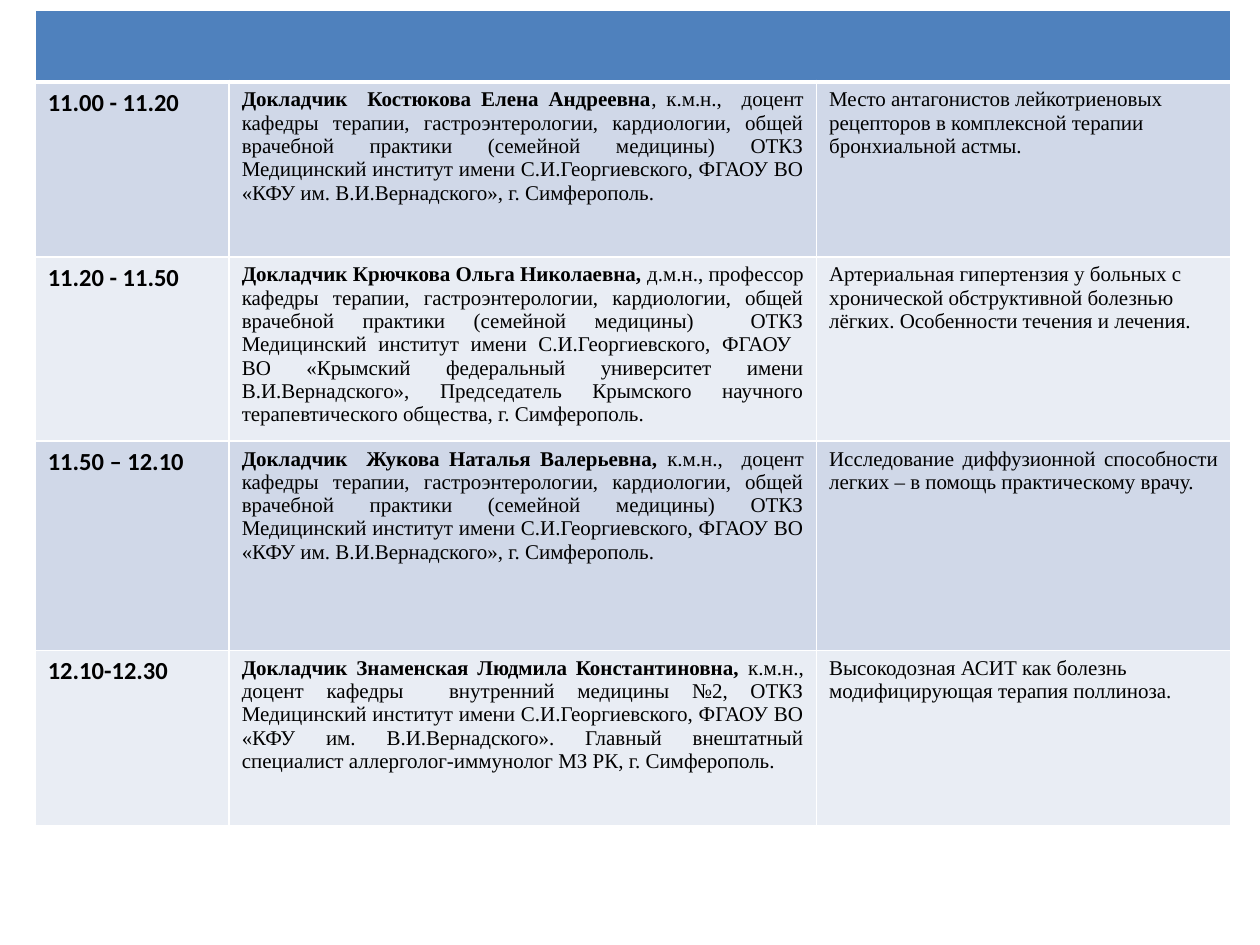
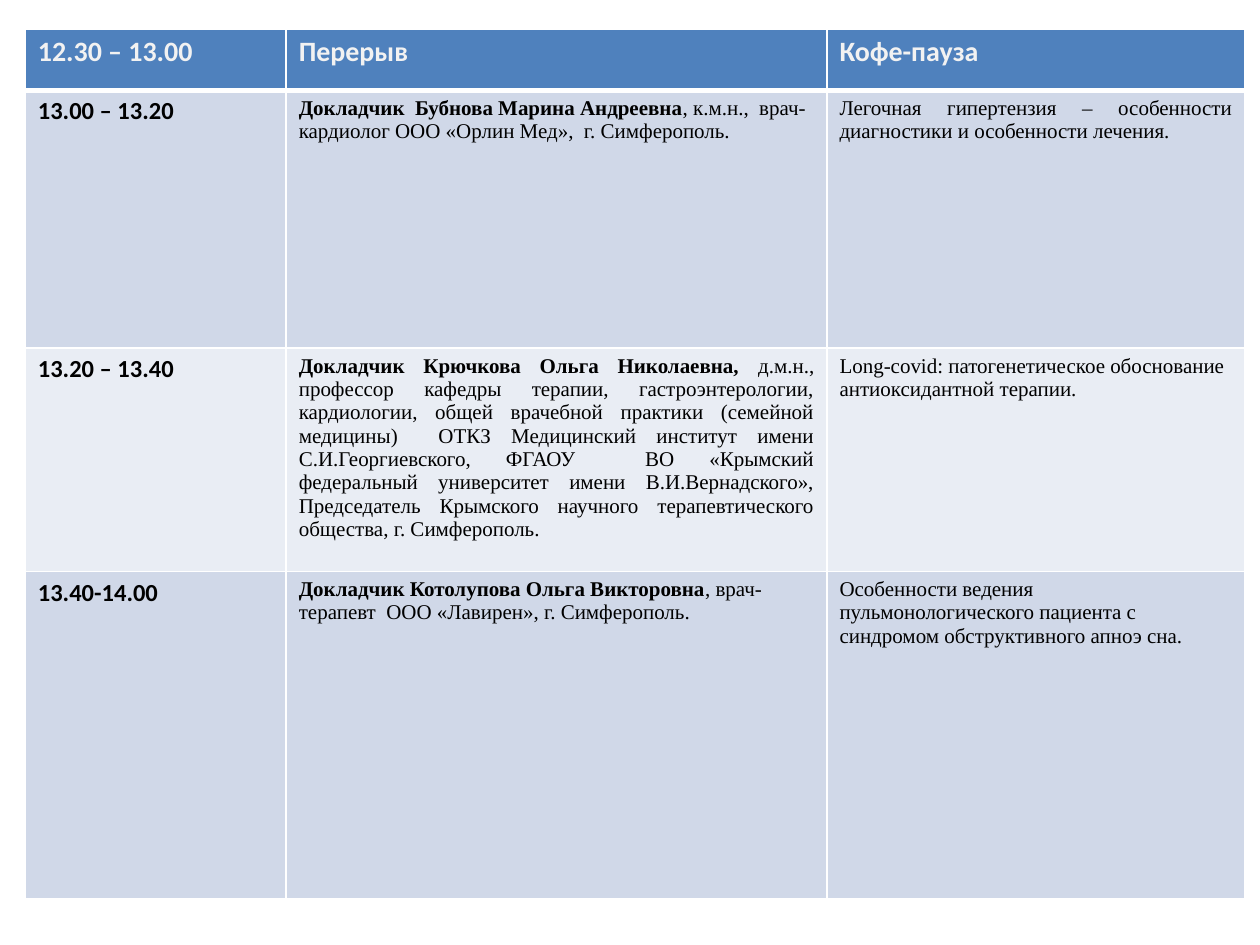
from lxml import etree
from pptx import Presentation
from pptx.dml.color import RGBColor
from pptx.enum.text import PP_ALIGN
from pptx.oxml.ns import qn
from pptx.util import Cm, Pt

LEFT, JUSTIFY = PP_ALIGN.LEFT, PP_ALIGN.JUSTIFY
BLUE = RGBColor(0x4F, 0x81, 0xBD)
BAND_DARK = RGBColor(0xD0, 0xD8, 0xE8)
BAND_LIGHT = RGBColor(0xE9, 0xED, 0xF4)
WHITE = RGBColor(0xFF, 0xFF, 0xFF)
PALE = RGBColor(0xF2, 0xF2, 0xF2)
BLACK = RGBColor(0, 0, 0)

HEADER = {"name": "Calibri", "size": Pt(16), "bold": True}
TIME = {"name": "Calibri", "size": Pt(14), "bold": True}
SPEAKER = {"name": "Times New Roman", "size": Pt(12), "bold": True}
BODY = {"name": "Times New Roman", "size": Pt(12), "bold": False}

DEPARTMENT = ("кафедры терапии, гастроэнтерологии, кардиологии, "
              "общей врачебной практики (семейной медицины)")
INSTITUTE = "ОТКЗ Медицинский институт имени С.И.Георгиевского,"
UNIVERSITY = "ФГАОУ ВО «КФУ им. В.И.Вернадского»"
DOCENT = f"к.м.н.,  доцент {DEPARTMENT} {INSTITUTE} {UNIVERSITY}, г. Симферополь."
PROFESSOR = ("Крючкова Ольга Николаевна, ",
             f"д.м.н., профессор {DEPARTMENT}  {INSTITUTE} ФГАОУ  ВО "
             "«Крымский федеральный университет имени В.И.Вернадского», "
             "Председатель Крымского научного терапевтического общества, "
             "г. Симферополь.", JUSTIFY)

MORNING = [
    ("11.00 - 11.20", (" Костюкова Елена Андреевна", f", {DOCENT}", JUSTIFY),
     ("Место антагонистов лейкотриеновых  рецепторов в комплексной терапии "
      "бронхиальной астмы.", LEFT)),
    ("11.20 - 11.50", PROFESSOR,
     ("Артериальная гипертензия у больных с хронической обструктивной болезнью "
      "лёгких. Особенности течения и лечения.", LEFT)),
    ("11.50 – 12.10", (" Жукова Наталья Валерьевна, ", DOCENT, JUSTIFY),
     ("Исследование диффузионной способности легких – в помощь практическому врачу.",
      JUSTIFY)),
    ("12.10-12.30",
     ("Знаменская Людмила Константиновна,",
      f" к.м.н., доцент кафедры  внутренний медицины №2, {INSTITUTE} {UNIVERSITY}. "
      "Главный внештатный специалист аллерголог-иммунолог МЗ РК, г. Симферополь.",
      JUSTIFY),
     ("Высокодозная АСИТ как болезнь модифицирующая терапия поллиноза.", LEFT)),
]
AFTERNOON = [
    ("13.00 – 13.20",
     (" Бубнова Марина Андреевна",
      ", к.м.н.,  врач-кардиолог ООО «Орлин Мед»,  г. Симферополь.", LEFT),
     ("Легочная гипертензия – особенности диагностики и особенности лечения.", JUSTIFY)),
    ("13.20 – 13.40", PROFESSOR,
     ("Long-covid: патогенетическое обоснование антиоксидантной терапии.", LEFT)),
    ("13.40-14.00",
     ("Котолупова Ольга Викторовна",
      ", врач-терапевт  ООО «Лавирен», г. Симферополь.", LEFT),
     ("Особенности ведения пульмонологического пациента с синдромом "
      "обструктивного апноэ сна.", LEFT)),
]


class ProgrammeDeck:
    """Holds the presentation, its current slide and the programme table style."""

    def __init__(self):
        self.presentation = Presentation()
        self.presentation.slide_width = Cm(25.4)
        self.presentation.slide_height = Cm(19.05)
        self.slide = None

    def add_slide(self):
        layout = self.presentation.slide_layouts[6]
        self.slide = self.presentation.slides.add_slide(layout)

    def add_text(self, cell, runs, color=BLACK, alignment=LEFT):
        paragraph = cell.text_frame.paragraphs[0]
        paragraph.alignment = alignment
        for text, style in runs:
            run = paragraph.add_run()
            run.text = text
            for attribute, value in style.items():
                setattr(run.font, attribute, value)
            run.font.color.rgb = color

    def add_borders(self, cell, row):
        widths = {"a:lnL": 1, "a:lnR": 1, "a:lnT": 3 if row == 1 else 1,
                  "a:lnB": 3 if row == 0 else 1}
        properties = cell._tc.get_or_add_tcPr()
        for position, (tag, width) in enumerate(widths.items()):
            line = etree.Element(qn(tag), w=str(Pt(width)))
            fill = etree.SubElement(line, qn("a:solidFill"))
            etree.SubElement(fill, qn("a:srgbClr"), val=str(WHITE))
            properties.insert(position, line)

    def add_table(self, left, top, widths, heights):
        shape = self.slide.shapes.add_table(
            len(heights), len(widths), Cm(left), Cm(top),
            Cm(sum(widths)), Cm(sum(heights)))
        table = shape.table
        for column, width in zip(table.columns, widths):
            column.width = Cm(width)
        for index, (row, height) in enumerate(zip(table.rows, heights)):
            row.height = Cm(height)
            band = BAND_DARK if index % 2 else BAND_LIGHT
            for cell in row.cells:
                cell.fill.solid()
                cell.fill.fore_color.rgb = band if index else BLUE
                self.add_borders(cell, index)
        return table

    def add_programme(self, left, top, widths, heights, talks, header=None):
        table = self.add_table(left, top, widths, heights)
        if header:
            for column, text in enumerate(header):
                self.add_text(table.cell(0, column), [(text, HEADER)], PALE)
        else:
            table.cell(0, 0).merge(table.cell(0, len(widths) - 1))
        for row, (time, speaker, topic) in enumerate(talks, start=1):
            name, position, speaker_alignment = speaker
            title, title_alignment = topic
            self.add_text(table.cell(row, 0), [(time, TIME)])
            self.add_text(table.cell(row, 1),
                          [(f"Докладчик {name}", SPEAKER), (position, BODY)],
                          alignment=speaker_alignment)
            self.add_text(table.cell(row, 2), [(title, BODY)],
                          alignment=title_alignment)


def main():
    deck = ProgrammeDeck()
    deck.add_slide()
    deck.add_programme(0.71, 0.2, (3.91, 11.84, 8.36),
                       (1.45, 3.53, 3.71, 4.22, 3.53), MORNING)
    deck.add_slide()
    deck.add_programme(0.51, 0.58, (5.26, 10.9, 8.43), (1.24, 5.2, 4.5, 6.6),
                       AFTERNOON, ("12.30 – 13.00", "Перерыв", "Кофе-пауза"))
    deck.presentation.save("out.pptx")


if __name__ == "__main__":
    main()
